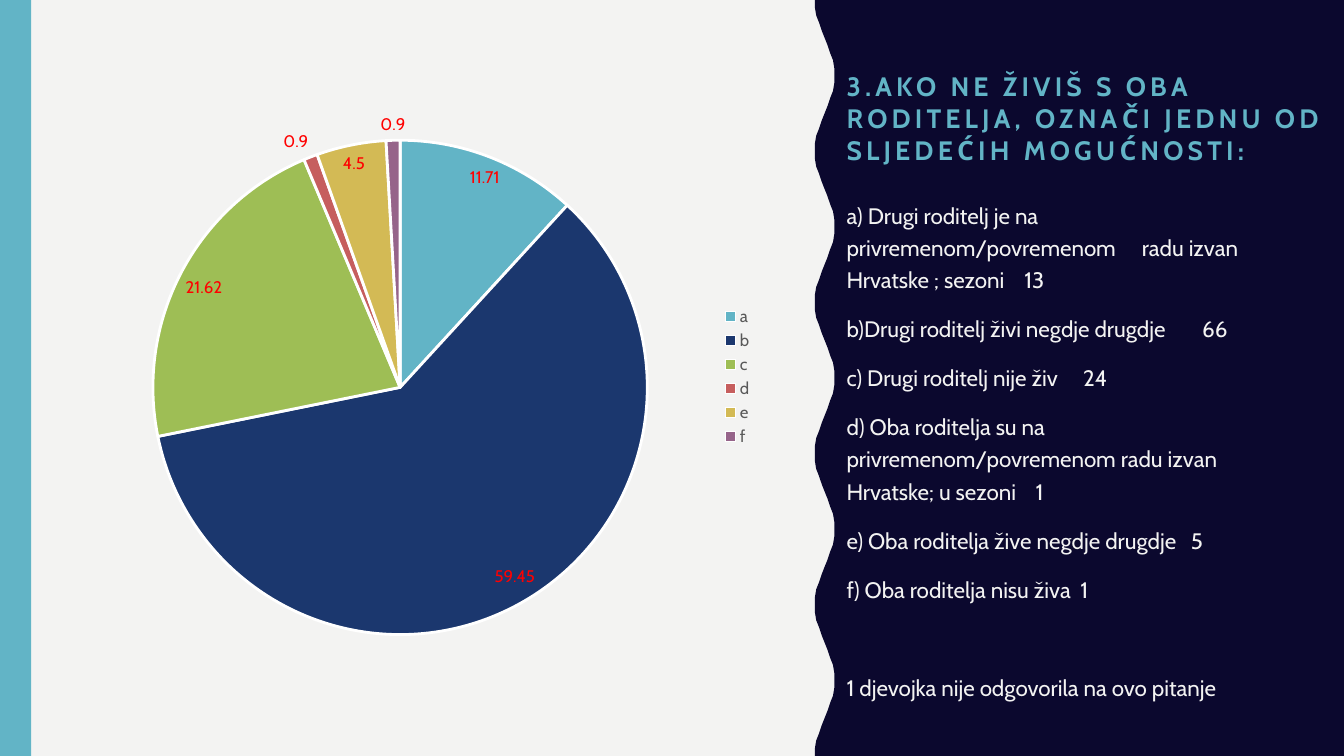
import math
from dataclasses import dataclass
from lxml import etree
from pptx import Presentation
from pptx import util as u
from pptx.chart import data as cd
from pptx.dml.color import RGBColor
from pptx.enum import chart as ch, shapes, text
from pptx.oxml import ns


@dataclass
class Theme:
    face: str = "Cabin"
    paper: str = "F3F3F2"
    navy: str = "0B082E"
    teal: str = "62B4C6"
    gray: str = "595959"
    red: str = "FF0000"
    edge: str = "FFFFFF"
    pie: tuple = ("62B4C6", "1B376E", "9EBE55", "C65E5E", "D3BA55", "96648A")
    head: int = 19
    body: int = 16
    label: int = 12


class Page:
    """One slide drawn in one theme; all lengths in points."""

    def __init__(self, deck, theme):
        self.theme = theme
        self.slide = deck.slides.add_slide(deck.slide_layouts[6])
        self.items = self.slide.shapes
        self.paint(self.slide.background.fill, theme.paper)

    def paint(self, fill, color):
        fill.solid()
        fill.fore_color.rgb = RGBColor.from_string(color)

    def plain(self, shape, color):
        shape.shadow.inherit = False
        self.paint(shape.fill, color)
        shape.line.fill.background()

    def style(self, font, size, color, bold=False):
        font.name, font.size, font.bold = self.theme.face, u.Pt(size), bold
        font.color.rgb = RGBColor.from_string(color)

    def bar(self, box, color):
        rect = shapes.MSO_SHAPE.RECTANGLE
        self.plain(self.items.add_shape(rect, *map(u.Pt, box)), color)

    def outline(self, points, color):
        pen = self.items.build_freeform(*points[0], scale=u.Pt(1))
        pen.add_line_segments(points[1:], close=True)
        self.plain(pen.convert_to_shape(), color)

    def frame(self, box, anchor):
        frame = self.items.add_textbox(*map(u.Pt, box)).text_frame
        frame.word_wrap = True
        frame.vertical_anchor = anchor
        return frame

    def title(self, box, words, track):
        para = self.frame(box, text.MSO_ANCHOR.BOTTOM).paragraphs[0]
        self.style(para.font, self.theme.head, self.theme.teal, True)
        run = para.add_run()
        run.text = words
        run.font.bold = True
        run.font._element.set("spc", str(track * 100))

    def answers(self, box, rows):
        frame = self.frame(box, text.MSO_ANCHOR.TOP)
        for i, (words, gap, stops) in enumerate(rows):
            para = frame.add_paragraph() if i else frame.paragraphs[0]
            para.add_run().text = words
            para.line_spacing = 1.2
            para.space_before = u.Pt(gap)
            self.style(para.font, self.theme.body, self.theme.paper)
            if stops:
                self.tabs(para, stops)

    def tabs(self, para, stops):
        props = para._p.get_or_add_pPr()
        tabs = etree.Element(ns.qn("a:tabLst"))
        for stop in stops:
            etree.SubElement(tabs, ns.qn("a:tab"), pos=str(u.Pt(stop)), algn="l")
        props.find(ns.qn("a:defRPr")).addprevious(tabs)

    def pie(self, box, names, values, area):
        data = cd.CategoryChartData()
        data.categories = names
        data.add_series("Series 1", values)
        kind = ch.XL_CHART_TYPE.PIE
        chart = self.items.add_chart(kind, *map(u.Pt, box), data).chart
        chart.has_title = False
        chart.font.name = self.theme.face
        # Legend
        chart.has_legend = True
        chart.legend.position = ch.XL_LEGEND_POSITION.RIGHT
        chart.legend.include_in_layout = False
        self.style(chart.legend.font, self.theme.label, self.theme.gray)
        # Slices
        plot = chart.plots[0]
        plot.vary_by_categories = True
        for i, color in enumerate(self.theme.pie):
            look = plot.series[0].points[i].format
            self.paint(look.fill, color)
            self.paint(look.line.fill, self.theme.edge)
            look.line.width = u.Pt(2)
        # Values
        labels = plot.series[0].data_labels
        labels.show_value = True
        labels.position = ch.XL_LABEL_POSITION.BEST_FIT
        self.style(labels.font, self.theme.label, self.theme.red)
        self.place(chart, area)

    def place(self, chart, area):
        plot = chart._chartSpace.find(".//" + ns.qn("c:plotArea"))
        for old in plot.findall(ns.qn("c:layout")):
            plot.remove(old)
        layout = etree.Element(ns.qn("c:layout"))
        manual = etree.SubElement(layout, ns.qn("c:manualLayout"))
        marks = [("layoutTarget", "inner"), ("xMode", "edge"), ("yMode", "edge")]
        for tag, val in marks + list(zip("xywh", area)):
            etree.SubElement(manual, ns.qn("c:" + tag), val=str(val))
        plot.insert(0, layout)


def wave(wide, high):
    """Panel outline with five even waves down its left edge."""
    steps = 100
    edge = []
    for i in range(steps + 1):
        turn = 2 * math.pi * 5 * i / steps
        edge.append((589 - 7.2 * math.cos(turn), high * i / steps))
    return [(wide, 0)] + edge + [(wide, high)]


def main():
    wide, high = 960, 540
    deck = Presentation()
    deck.slide_width, deck.slide_height = u.Pt(wide), u.Pt(high)
    theme = Theme()
    page = Page(deck, theme)

    # Side panel and left band
    page.outline(wave(wide, high), theme.navy)
    page.bar((0, 0, 22.3, high), theme.teal)

    # Question
    page.title((597.6, 10.8, 362.4, 110.9),
               "3.AKO NE ŽIVIŠ S OBA RODITELJA, OZNAČI JEDNU OD "
               "SLJEDEĆIH MOGUĆNOSTI:", 3)

    # Shares of answers
    page.pie((60.5, 72.7, 484.6, 392.4), "abcdef",
             (11.71, 59.45, 21.62, 0.9, 4.5, 0.9), (0.1, 0.07, 0.73, 0.9))

    # Answers: words, space before, tab stops
    page.answers((597.6, 136.8, 341.3, 327.6), [
        ("a) Drugi roditelj je na privremenom/povremenom\tradu izvan "
         "Hrvatske ; sezoni\t13", 12, (127, 211)),
        ("b)Drugi roditelj živi negdje drugdje\t66", 12, (254,)),
        ("c) Drugi roditelj nije živ\t24", 12, (169,)),
        ("d) Oba roditelja su na privremenom/povremenom radu izvan "
         "Hrvatske; u sezoni\t1", 12, (135,)),
        ("e) Oba roditelja žive negdje drugdje\t5", 12, (246,)),
        ("f) Oba roditelja nisu živa\t1", 12, (167,)),
        ("1 djevojka nije odgovorila na ovo pitanje", 47, ()),
    ])
    deck.save("out.pptx")


if __name__ == "__main__":
    main()
